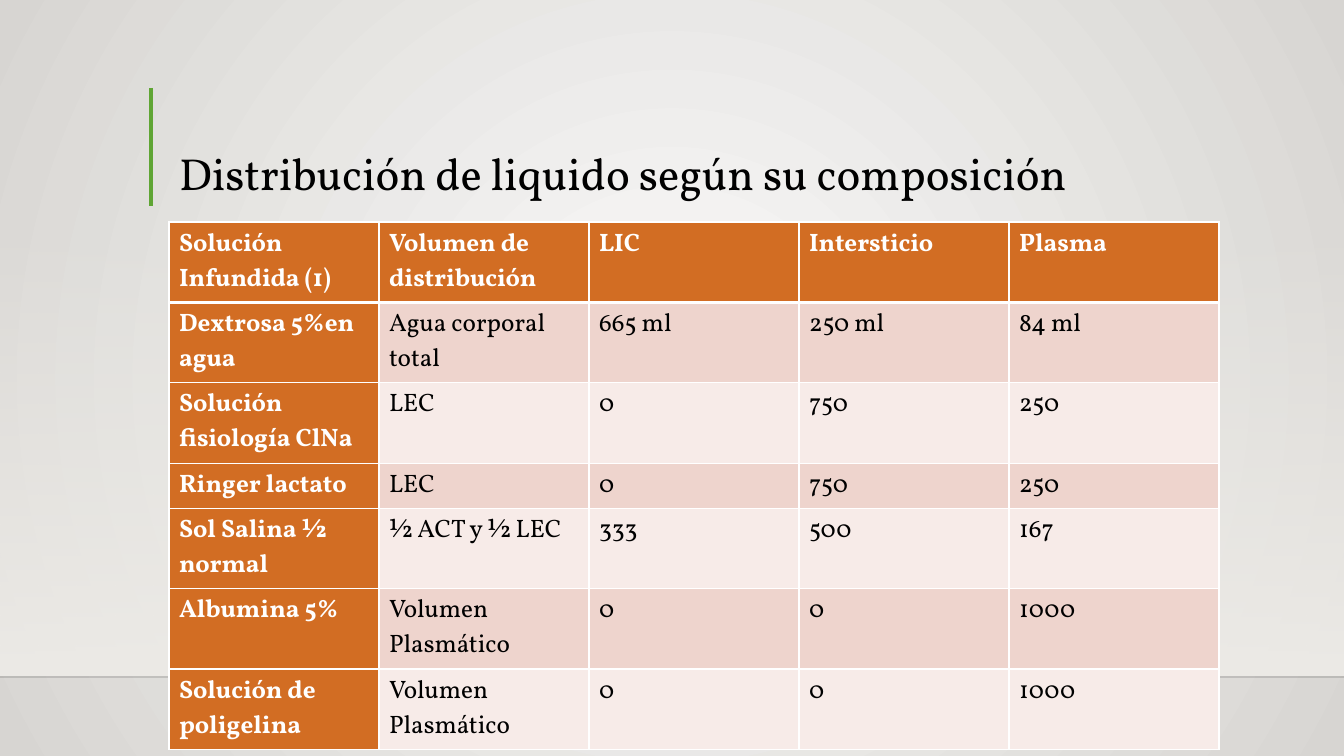
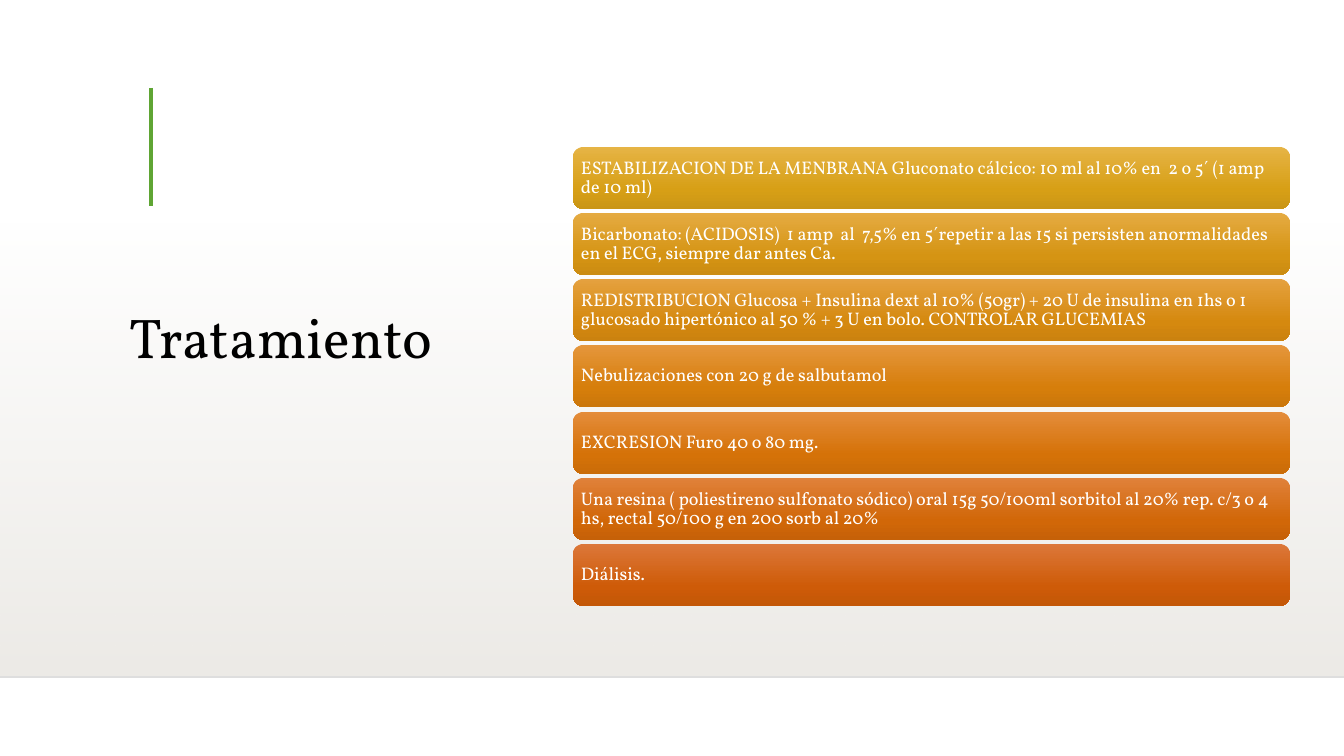
import lxml.etree
import pptx
import pptx.dml.color
import pptx.enum.dml
import pptx.enum.shapes
import pptx.enum.text
import pptx.oxml.ns
import pptx.util

PX = 9071  # EMU in one px
FONT = "Vollkorn"
BLACK = pptx.dml.color.RGBColor(0x00, 0x00, 0x00)
WHITE = pptx.dml.color.RGBColor(0xFF, 0xFF, 0xFF)
INK = pptx.dml.color.RGBColor(0x00, 0x00, 0x01)
GREEN = pptx.dml.color.RGBColor(0x5F, 0xA5, 0x34)
SAND = pptx.dml.color.RGBColor(0xED, 0xEB, 0xE7)
LIGHT = pptx.dml.color.RGBColor(0xFA, 0xFA, 0xF9)
GRAY = pptx.dml.color.RGBColor(0xD7, 0xD5, 0xD2)
RUST = pptx.dml.color.RGBColor(0xD2, 0x6D, 0x23)
PINK = pptx.dml.color.RGBColor(0xEE, 0xD4, 0xCD)
PALE = pptx.dml.color.RGBColor(0xF7, 0xEB, 0xE8)
BLENDS = [
    [pptx.dml.color.RGBColor.from_string(code) for code in row.split()]
    for row in (
        "E6B445 D79F16 CA9616",
        "E5AB42 D59413 CB8C12",
        "E5A13F D5890F CB820F",
        "E5963C D67E0B CB770B",
        "E48C3A D57208 CA6C08",
        "E0813A D16708 C66108",
        "DC7739 CE5B08 C35707",
    )
]

ROWS = [
    ["Solución Infundida (1)", "Volumen de distribución", "LIC", "Intersticio", "Plasma"],
    ["Dextrosa 5%en agua", "Agua corporal total", "665 ml", "250 ml", "84 ml"],
    ["Solución fisiología ClNa", "LEC", "0", "750", "250"],
    ["Ringer lactato", "LEC", "0", "750", "250"],
    ["Sol Salina ½ normal", "½ ACT y ½ LEC", "333", "500", "167"],
    ["Albumina 5%", "Volumen Plasmático", "0", "0", "1000"],
    ["Solución de poligelina", "Volumen Plasmático", "0", "0", "1000"],
]
STEPS = [
    "ESTABILIZACION DE LA MENBRANA Gluconato cálcico: 10 ml al 10% en  2 o 5´ (1 amp de 10 ml)",
    "Bicarbonato: (ACIDOSIS)  1 amp  al  7,5% en 5´repetir a las 15 si persisten "
    "anormalidades en el ECG, siempre dar antes Ca.",
    "REDISTRIBUCION Glucosa + Insulina dext al 10% (50gr) + 20 U de insulina en 1hs o 1 "
    "glucosado hipertónico al 50 % + 3 U en bolo. CONTROLAR GLUCEMIAS",
    "Nebulizaciones con 20 g de salbutamol",
    "EXCRESION Furo 40 o 80 mg.",
    "Una resina ( poliestireno sulfonato sódico) oral 15g 50/100ml sorbitol al 20% "
    "rep. c/3 o 4 hs, rectal 50/100 g en 200 sorb al 20%",
    "Diálisis.",
]


def write(frame, text, size, color, bold=False, space=1.0, anchor=None):
    frame.text = text
    if anchor is not None:
        frame.word_wrap = True
        frame.auto_size = pptx.enum.text.MSO_AUTO_SIZE.NONE
        frame.vertical_anchor = anchor
    para = frame.paragraphs[0]
    para.alignment = pptx.enum.text.PP_ALIGN.LEFT
    para.line_spacing = space
    font = para.runs[0].font
    font.name, font.size, font.bold = FONT, pptx.util.Pt(size), bold
    font.color.rgb = color


def grade(fill, node, stops, round_fill=False):
    """Fill with (percent, colour, opacity) stops, downwards or from the centre."""
    fill.gradient()
    grad = node.find(".//" + pptx.oxml.ns.qn("a:gradFill"))
    for child in list(grad):
        grad.remove(child)
    items = "".join(
        f'<a:gs pos="{pos * 1000}"><a:srgbClr val="{color}">'
        f'<a:alpha val="{alpha * 1000}"/></a:srgbClr></a:gs>'
        for pos, color, alpha in stops
    )
    way = '<a:lin ang="5400000" scaled="0"/>'
    if round_fill:
        way = ('<a:path path="circle"><a:fillToRect l="50000" t="50000" '
               'r="50000" b="50000"/></a:path>')
    space = pptx.oxml.ns.nsdecls("a")
    tree = lxml.etree.fromstring(f"<a:x {space}><a:gsLst>{items}</a:gsLst>{way}</a:x>")
    grad.extend(list(tree))


deck = pptx.Presentation()
deck.slide_width, deck.slide_height = 1344 * PX, 756 * PX
layout = deck.slide_layouts[5]
for holder in list(layout.placeholders)[1:]:
    holder.element.getparent().remove(holder.element)

# Titles
slides = []
for text, size, left, top, width, height in (
    ("Distribución de liquido según su composición", 32, 169, 89, 1049, 116),
    ("Tratamiento", 40, 119, 237, 377, 139),
):
    slide = deck.slides.add_slide(layout)
    title = slide.shapes.title
    title.left, title.top = left * PX, top * PX
    title.width, title.height = width * PX, height * PX
    write(title.text_frame, text, size, BLACK, space=0.9,
          anchor=pptx.enum.text.MSO_ANCHOR.BOTTOM)
    slides.append(slide)
fluids, care = slides

# Shared band and lines, moved to the layout
band = fluids.shapes.add_shape(
    pptx.enum.shapes.MSO_SHAPE.RECTANGLE, 0, 222 * PX, 1344 * PX, 454 * PX)
band.shadow.inherit = False
band.line.fill.background()
grade(band.fill, band.element, [(0, SAND, 0), (100, SAND, 100)])
layout.shapes.element.append(band.element)
for x1, y1, x2, y2, color, width, alpha in (
    (0, 677, 1344, 677, INK, 1, 20),
    (151, 88, 151, 206, GREEN, 3, 100),
):
    line = fluids.shapes.add_connector(
        pptx.enum.shapes.MSO_CONNECTOR.STRAIGHT, x1 * PX, y1 * PX, x2 * PX, y2 * PX)
    line.line.color.rgb = color
    line.line.width = pptx.util.Pt(width)
    tint = line.element.find(".//" + pptx.oxml.ns.qn("a:srgbClr"))
    lxml.etree.SubElement(tint, pptx.oxml.ns.qn("a:alpha")).set("val", str(alpha * 1000))
    lxml.etree.SubElement(line.element.spPr, pptx.oxml.ns.qn("a:effectLst"))
    layout.shapes.element.append(line.element)

# Fluid table
grade(fluids.background.fill, fluids.element,
      [(0, LIGHT, 100), (100, GRAY, 100)], round_fill=True)
table = fluids.shapes.add_table(
    len(ROWS), 5, 169 * PX, 222 * PX, 1050 * PX, 41 * len(ROWS) * PX).table
table.first_col = True
for r, row in enumerate(ROWS):
    for c, text in enumerate(row):
        cell = table.cell(r, c)
        head = r == 0 or c == 0
        write(cell.text_frame, text, 18, WHITE if head else BLACK, bold=head)
        cell.fill.solid()
        cell.fill.fore_color.rgb = RUST if head else PINK if r % 2 else PALE
        props = cell._tc.get_or_add_tcPr()
        for place, side in enumerate("LRTB"):
            thick = (side == "B" and r == 0) or (side == "T" and r == 1)
            edge = lxml.etree.fromstring(
                f'<a:ln{side} {pptx.oxml.ns.nsdecls("a")} w="{38100 if thick else 12700}">'
                f'<a:solidFill><a:srgbClr val="{WHITE}"/></a:solidFill></a:ln{side}>')
            props.insert(place, edge)

# Treatment steps
for i, (text, blend) in enumerate(zip(STEPS, BLENDS)):
    top = 147 + round(i * 397 / 6)
    card = care.shapes.add_shape(
        pptx.enum.shapes.MSO_SHAPE.ROUNDED_RECTANGLE, 573 * PX, top * PX, 717 * PX, 62 * PX)
    card.shadow.inherit = False
    card.line.fill.background()
    grade(card.fill, card.element,
          [(pos, color, 100) for pos, color in zip((0, 69, 100), blend)])
    frame = card.text_frame
    frame.margin_left = frame.margin_right = 5 * PX
    frame.margin_top = frame.margin_bottom = 5 * PX
    write(frame, text, 13, WHITE, space=0.9, anchor=pptx.enum.text.MSO_ANCHOR.MIDDLE)

deck.save("out.pptx")
